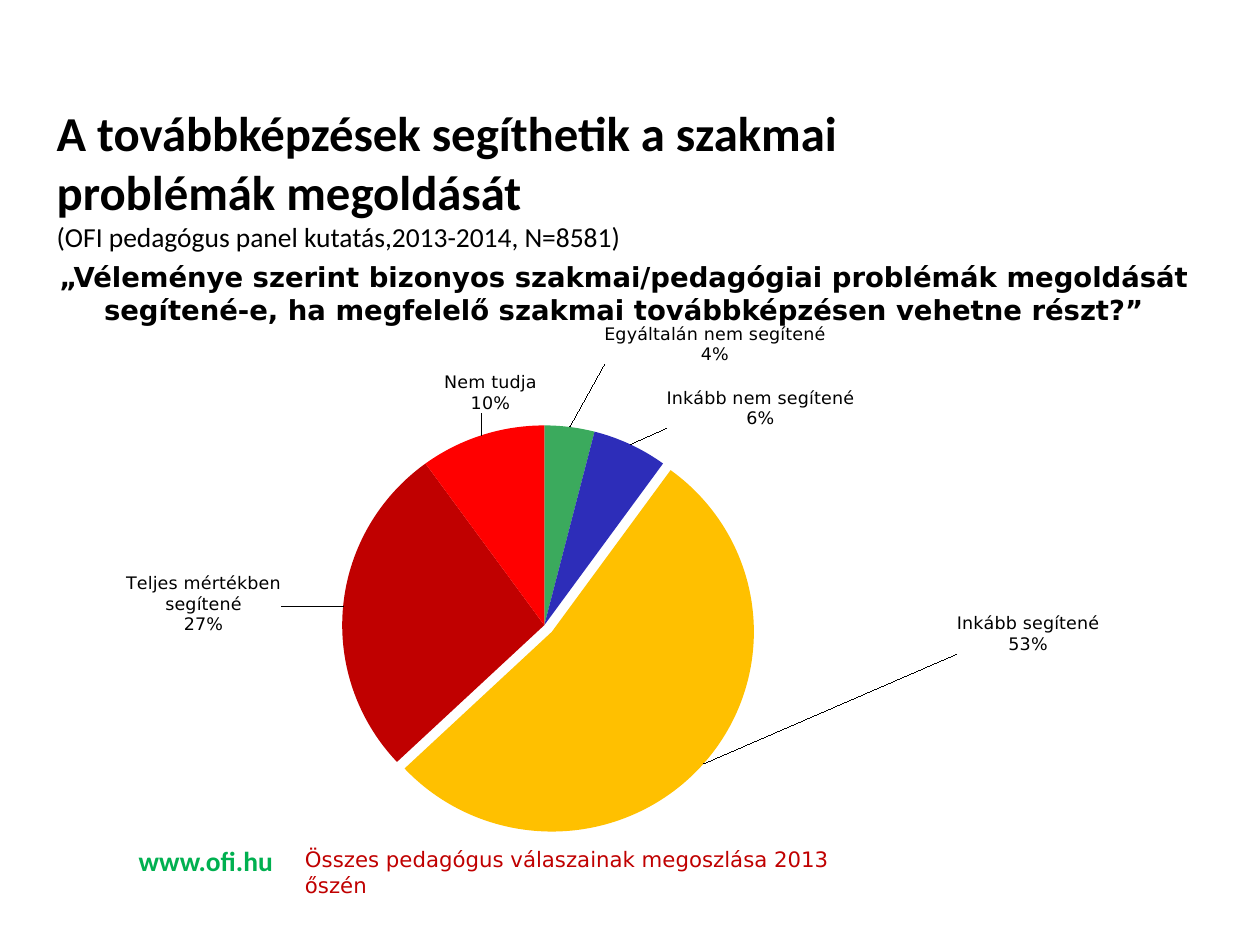
import copy
import pptx
import pptx.chart.data
import pptx.dml.color
import pptx.enum.chart
import pptx.enum.text
import pptx.oxml
import pptx.oxml.ns
import pptx.util

WIDE, HIGH = 14, 10.5
SANS, BODY = "DejaVu Sans", "Calibri"
LEFT = pptx.enum.text.PP_ALIGN.LEFT
MID = pptx.enum.text.PP_ALIGN.CENTER
TOP = pptx.enum.text.MSO_ANCHOR.TOP
SLICES = [
    ("Egyáltalán nem segítené", 4, "3BAA5D", (0.03, -0.1)),
    ("Inkább nem segítené", 6, "2D2DB9", (0.03, -0.02)),
    ("Inkább segítené", 53, "FFC000", (0.22, -0.27)),
    ("Teljes mértékben segítené", 27, "C00000", (-0.05, 0.05)),
    ("Nem tudja", 10, "FF0000", (0.05, -0.03)),
]


def color(code):
    return pptx.dml.color.RGBColor.from_string(code)


def place(x, y, w, h):
    shares = (x * WIDE, y * HIGH, w * WIDE, h * HIGH)
    return [pptx.util.Inches(part) for part in shares]


def style(font, size, name, code="000000", bold=False):
    looks = {"size": pptx.util.Pt(size), "name": name, "bold": bold}
    for key, value in looks.items():
        setattr(font, key, value)
    font.color.rgb = color(code)


def write(slide, area, lines, align=LEFT, anchor=TOP, pad=(0.14, 0.07)):
    frame = slide.shapes.add_textbox(*place(*area)).text_frame
    side, edge = [pptx.util.Inches(gap) for gap in pad]
    looks = {
        "word_wrap": True, "vertical_anchor": anchor,
        "margin_left": side, "margin_right": side,
        "margin_top": edge, "margin_bottom": edge,
    }
    for key, value in looks.items():
        setattr(frame, key, value)
    for i, (text, *look) in enumerate(lines):
        para = frame.add_paragraph() if i else frame.paragraphs[0]
        para.alignment = align
        run = para.add_run()
        run.text = text
        style(run.font, *look)


def node(tag, inner="", value=None):
    space = pptx.oxml.ns.nsdecls("c")
    val = "" if value is None else f' val="{value}"'
    return pptx.oxml.parse_xml(f"<c:{tag} {space}{val}>{inner}</c:{tag}>")


def layout(**parts):
    inner = "".join(f'<c:{key} val="{val}"/>' for key, val in parts.items())
    return node("layout", f"<c:manualLayout>{inner}</c:manualLayout>")


def label(series):
    marks = series.data_labels
    looks = {
        "show_value": False, "show_percentage": True,
        "show_category_name": True,
        "position": pptx.enum.chart.XL_LABEL_POSITION.OUTSIDE_END,
    }
    for key, value in looks.items():
        setattr(marks, key, value)
    style(marks.font, 14, SANS)
    root = marks._element
    root.xpath("c:showBubbleSize")[0].addnext(node("separator", "\n"))
    base = [part for part in root if not part.tag.endswith("showLeaderLines")]
    for i, (*_, (x, y)) in enumerate(SLICES):
        mark = node("dLbl")
        mark.append(node("idx", value=i))
        mark.append(layout(x=x, y=y))
        mark.extend(copy.deepcopy(base))
        root.insert(i, mark)


def pie(slide, area):
    data = pptx.chart.data.CategoryChartData()
    data.categories = [name for name, *_ in SLICES]
    data.add_series("Series 1", [value for _, value, *_ in SLICES])
    kind = pptx.enum.chart.XL_CHART_TYPE.PIE
    chart = slide.shapes.add_chart(kind, *place(*area), data).chart
    chart.has_title = chart.has_legend = False
    style(chart.font, 10, BODY)
    plot = chart.plots[0]
    plot.vary_by_categories = True
    series = plot.series[0]
    for i, (_, _, code, _) in enumerate(SLICES):
        fill = series.points[i].format.fill
        fill.solid()
        fill.fore_color.rgb = color(code)
    big = series._element.xpath("c:dPt[c:idx/@val='2']/c:spPr")[0]
    big.addprevious(node("explosion", value=5))
    label(series)
    field = chart._chartSpace.xpath("c:chart/c:plotArea")[0]
    for old in field.xpath("c:layout"):
        field.remove(old)
    field.insert(0, layout(layoutTarget="inner", xMode="edge", yMode="edge",
                           x=0.06, y=0.3, w=0.74, h=0.7))


def main():
    deck = pptx.Presentation()
    deck.slide_width = pptx.util.Inches(WIDE)
    deck.slide_height = pptx.util.Inches(HIGH)
    slide = deck.slides.add_slide(deck.slide_layouts[6])
    write(slide, (0.1, 0.886, 0.32, 0.05),
          [("www.ofi.hu", 22, BODY, "00B050", True)])
    pie(slide, (0.045, 0.269, 0.9, 0.611))
    write(slide, (0.025, 0.269, 0.94, 0.086),
          [("„Véleménye szerint bizonyos szakmai/pedagógiai problémák "
            "megoldását segítené-e, ha megfelelő szakmai továbbképzésen "
            "vehetne részt?”", 22, SANS, "000000", True)], MID)
    write(slide, (0.232, 0.889, 0.488, 0.04),
          [("Összes pedagógus válaszainak megoszlása 2013 őszén",
            17, SANS, "C00000")])
    write(slide, (0.045, 0.132, 0.741, 0.113),
          [("A továbbképzések segíthetik a szakmai problémák megoldását",
            39, BODY, "000000", True),
           ("(OFI pedagógus panel kutatás,2013-2014, N=8581)", 22, BODY)],
          anchor=pptx.enum.text.MSO_ANCHOR.MIDDLE, pad=(0, 0))
    deck.save("out.pptx")


if __name__ == "__main__":
    main()
